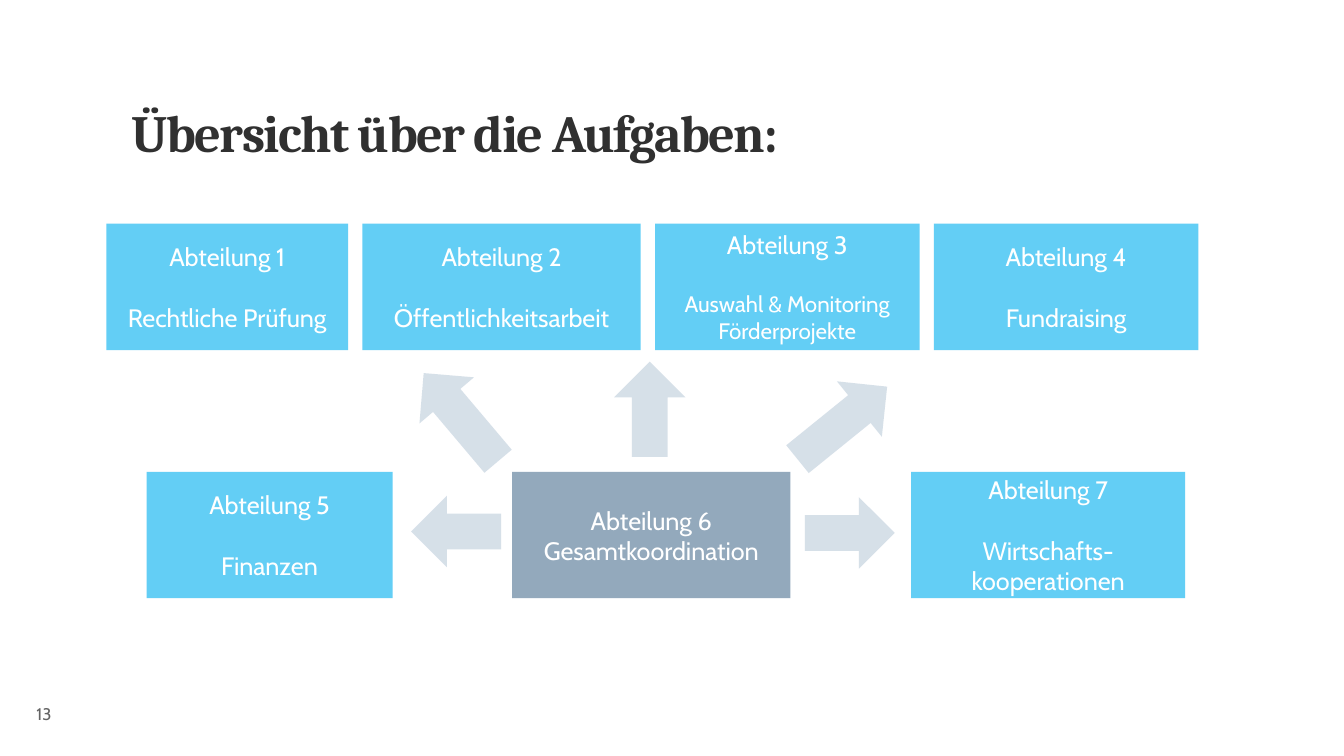
from lxml.etree import SubElement
from pptx import Presentation
from pptx.dml.color import RGBColor
from pptx.enum.shapes import MSO_SHAPE as Shape
from pptx.enum.text import MSO_ANCHOR as Anchor, PP_ALIGN as Align
from pptx.oxml.ns import qn
from pptx.util import Cm, Pt

SKY, SLATE, MIST, WHITE = "00B0F0", "4F7393", "BDCDDB", "FFFFFF"
BOX_H, ARROW_H, GAP = 2.39, 1.35, 0.27
TOP_ROW, LOWER_ROW = 4.23, 8.92


def rgb(hex_color):
    """Turn a hex string into a colour."""
    return RGBColor.from_string(hex_color)


def style_runs(p, font, size, color, bold=False):
    """Format every run of a paragraph."""
    for r in p.runs:
        r.font.name, r.font.size, r.font.bold = font, Pt(size), bold
        r.font.color.rgb = rgb(color)


def set_frame(tf, anchor, *insets):
    """Set wrapping, anchor and the left, top, right and bottom insets."""
    tf.word_wrap, tf.vertical_anchor = True, anchor
    (tf.margin_left, tf.margin_top,
     tf.margin_right, tf.margin_bottom) = [Cm(i) for i in insets]


def add_block(s, kind, x, y, w, h, color):
    """Add a borderless shape with a translucent fill."""
    sp = s.shapes.add_shape(kind, Cm(x), Cm(y), Cm(w), Cm(h))
    sp.shadow.inherit = False
    sp.line.fill.background()
    sp.fill.solid()
    sp.fill.fore_color.rgb = rgb(color)
    srgb = sp._element.spPr.find(qn("a:solidFill"))[0]
    SubElement(srgb, qn("a:alpha"), val="61000")
    return sp


def add_department(s, x, y, w, number, task, color=SKY, size=13.5, space=16.3):
    """Add a department box with its number and task."""
    sp = add_block(s, Shape.RECTANGLE, x, y, w, BOX_H, color)
    tf = sp.text_frame
    set_frame(tf, Anchor.MIDDLE, 0.25, 0.13, 0.25, 0.13)
    tf.text = f"Abteilung {number}\n{task}"
    for p, pt in zip(tf.paragraphs, (13.5, size)):
        p.alignment = Align.CENTER
        style_runs(p, "Cabin", pt, WHITE)
    tf.paragraphs[1].space_before = Pt(space)


def add_arrow(s, x, y, w, angle):
    """Add a block arrow turned by an angle."""
    sp = add_block(s, Shape.RIGHT_ARROW, x, y, w, ARROW_H, MIST)
    sp.rotation = angle


def add_title(s, text):
    """Place and format the title."""
    sp = s.shapes.title
    sp.left, sp.top, sp.width, sp.height = Cm(2.49), Cm(0.94), Cm(20.19), Cm(3.25)
    tf = sp.text_frame
    set_frame(tf, Anchor.MIDDLE, 0, 0, 0, 0)
    tf.text = text
    p = tf.paragraphs[0]
    p.alignment, p.line_spacing = Align.LEFT, 0.9
    style_runs(p, "Cambria", 28, "303030", bold=True)
    p.runs[0].font._element.set("spc", "-80")


def add_page_number(s, number):
    """Add the page number at the bottom left."""
    tf = s.shapes.add_textbox(Cm(0.69), Cm(12.95), Cm(1.4), Cm(0.74)).text_frame
    set_frame(tf, Anchor.BOTTOM, 0, 0.13, 0.25, 0)
    tf.text = str(number)
    style_runs(tf.paragraphs[0], "Cabin", 9, "636363")


def main():
    """Build and save the slide."""
    prs = Presentation()
    prs.slide_width, prs.slide_height = Cm(25.4), Cm(14.29)
    s = prs.slides.add_slide(prs.slide_layouts[5])
    add_page_number(s, 13)
    add_title(s, "Übersicht über die Aufgaben:")

    x = 2.01
    top_row = [
        (4.57, "Rechtliche Prüfung", 13.5),
        (5.26, "Öffentlichkeitsarbeit", 13.5),
        (5, "Auswahl & Monitoring Förderprojekte", 12),
        (5, "Fundraising", 13.5),
    ]
    for number, (w, task, size) in enumerate(top_row, 1):
        add_department(s, x, TOP_ROW, w, number, task, size=size)
        x += w + GAP

    add_department(s, 2.77, LOWER_ROW, 4.65, 5, "Finanzen")
    add_department(s, 9.68, LOWER_ROW, 5.26, 6, "Gesamtkoordination", SLATE, space=0)
    add_department(s, 17.22, LOWER_ROW, 5.18, 7, "Wirtschafts-kooperationen")

    for x, y, w, angle in [
        (15.21, 9.4, 1.7, 0),
        (14.83, 7.32, 2.18, 321),
        (11.38, 7.06, 1.8, 270),
        (7.62, 7.21, 2.18, 229.8),
        (7.77, 9.37, 1.7, 180),
    ]:
        add_arrow(s, x, y, w, angle)
    prs.save("out.pptx")


if __name__ == "__main__":
    main()
